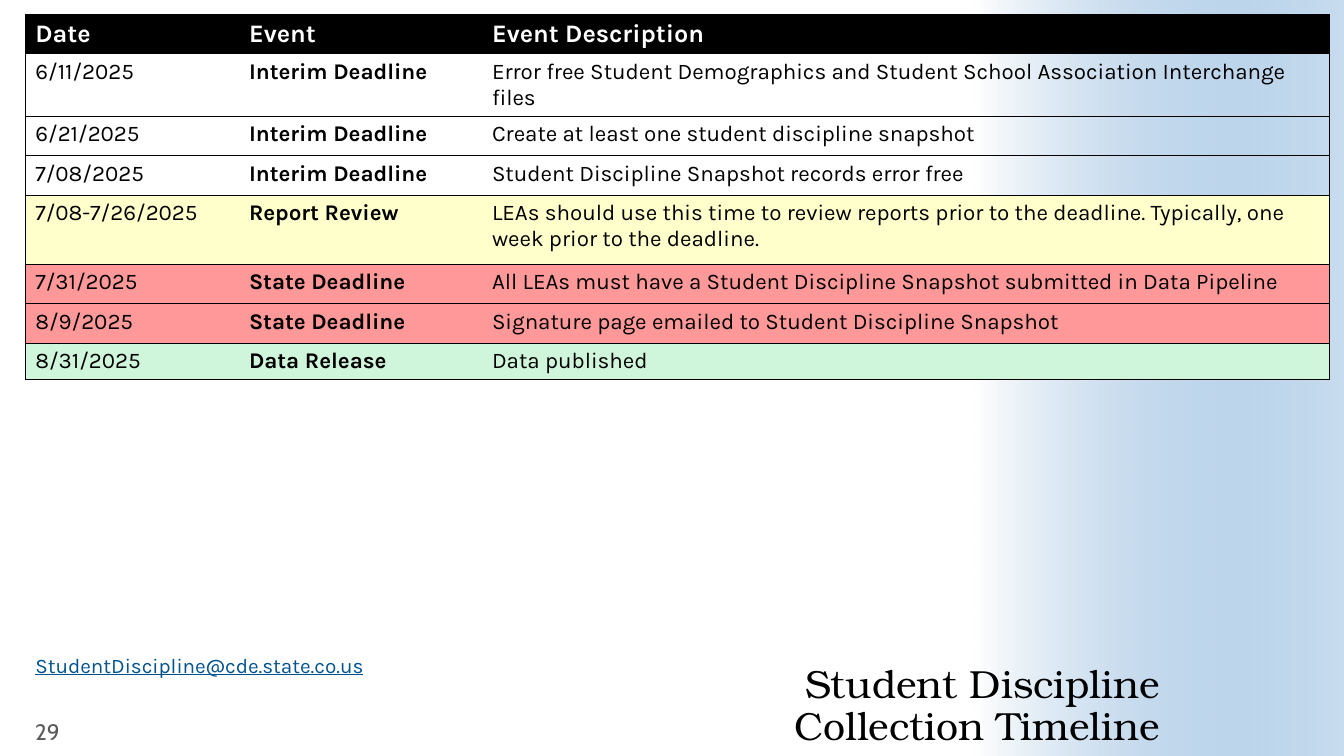
from pptx import Presentation
from pptx import util as u
from pptx.dml import color
from pptx.enum import shapes, text
from pptx.oxml import ns, xmlchemy

COLOURS = {"black": "000000", "white": "FFFFFF", "grey": "595959", "link": "005390",
           "blue": "488BC9", "yellow": "FFFFCC", "red": "FF9999", "green": "CFF5DA"}
SLIDE_WIDTH, SLIDE_HEIGHT = u.Inches(13.33), u.Inches(7.5)
PLAIN_STYLE = "{2D5ABB26-0587-4C30-8999-92F81FD0307C}"
COLUMN_SHARES = [15.9, 18.08, 63.02]
ROW_SHARES = [5.2, 5.6, 5.2, 5.2, 9.2, 5.2, 5.2, 4.67]
TIMELINE = [
    ("black", "Date", "Event", "Event Description"),
    (None, "6/11/2025", "Interim Deadline",
     "Error free Student Demographics and Student School Association Interchange files"),
    (None, "6/21/2025", "Interim Deadline", "Create at least one student discipline snapshot"),
    (None, "7/08/2025", "Interim Deadline", "Student Discipline Snapshot records error free"),
    ("yellow", "7/08-7/26/2025", "Report Review",
     "LEAs should use this time to review reports prior to the deadline. "
     "Typically, one week prior to the deadline."),
    ("red", "7/31/2025", "State Deadline",
     "All LEAs must have a Student Discipline Snapshot submitted in Data Pipeline"),
    ("red", "8/9/2025", "State Deadline", "Signature page emailed to Student Discipline Snapshot"),
    ("green", "8/31/2025", "Data Release", "Data published"),
]


def rgb(name):
    """Return the named colour."""
    return color.RGBColor.from_string(COLOURS[name])


def across(share):
    """Return a percentage of the slide width."""
    return u.Emu(round(SLIDE_WIDTH * share / 100))


def down(share):
    """Return a percentage of the slide height."""
    return u.Emu(round(SLIDE_HEIGHT * share / 100))


def area(left, top, width, height):
    """Return a box given in percentages of the slide."""
    return across(left), down(top), across(width), down(height)


def add_element(parent, tag, **attributes):
    """Append a DrawingML element and return it."""
    element = xmlchemy.OxmlElement(tag)
    for name, value in attributes.items():
        element.set(name, value)
    parent.append(element)
    return element


def style_runs(paragraph, size, font, colour, bold=False, underline=False):
    """Format every run of a paragraph."""
    for run in paragraph.runs:
        run.font.size, run.font.name = u.Pt(size), font
        run.font.bold, run.font.underline = bold, underline
        run.font.color.rgb = rgb(colour)


def fill_text(shape, box, content, anchor, **style):
    """Place a text shape, write its paragraph and return that paragraph."""
    shape.left, shape.top, shape.width, shape.height = box
    frame = shape.text_frame
    frame.text = content
    frame.word_wrap, frame.auto_size = True, text.MSO_AUTO_SIZE.NONE
    frame.vertical_anchor = anchor
    paragraph = frame.paragraphs[0]
    style_runs(paragraph, **style)
    return paragraph


def add_side_fade(slide):
    """Add the blue fade along the right side, behind everything else."""
    shape = slide.shapes.add_shape(shapes.MSO_SHAPE.RECTANGLE, *area(72.54, 0, 27.46, 100))
    shape.shadow.inherit = False
    shape.line.fill.background()
    shape.fill.gradient()
    shape.fill.gradient_angle = 0
    for stop, position, name in zip(shape.fill.gradient_stops, (0, 1), ("white", "blue")):
        stop.position, stop.color.rgb = position, rgb(name)
    end_colour = shape.element.spPr.findall(".//" + ns.qn("a:srgbClr"))[-1]
    add_element(end_colour, "a:alpha", val="30000")
    slide.shapes[0].element.addprevious(shape.element)


def set_border(cell, side, visible):
    """Draw or hide one side of a cell."""
    line = add_element(cell._tc.get_or_add_tcPr(), "a:ln" + side, w=str(u.Pt(0.5)))
    if visible:
        add_element(add_element(line, "a:solidFill"), "a:srgbClr", val=COLOURS["black"])
    else:
        add_element(line, "a:noFill")


def format_cell(cell, content, column, fill, header):
    """Write and format one timeline cell."""
    last = len(COLUMN_SHARES) - 1
    for side, visible in (("L", column == 0), ("R", column == last), ("T", True), ("B", True)):
        set_border(cell, side, visible)
    if fill:
        cell.fill.solid()
        cell.fill.fore_color.rgb = rgb(fill)
    else:
        cell.fill.background()
    cell.text_frame.text = content
    style_runs(cell.text_frame.paragraphs[0], 18 if header else 16, "Karla",
               "white" if header else "black", bold=header or column == 1)


def add_timeline(slide):
    """Add the table of dates and events."""
    box = area(1.88, 1.87, sum(COLUMN_SHARES), sum(ROW_SHARES))
    table = slide.shapes.add_table(len(TIMELINE), len(COLUMN_SHARES), *box).table
    table.horz_banding = False
    table._tbl.tblPr.find(ns.qn("a:tableStyleId")).text = PLAIN_STYLE
    for column, share in zip(table.columns, COLUMN_SHARES):
        column.width = across(share)
    for row, share in zip(table.rows, ROW_SHARES):
        row.height = down(share)
    for row, (fill, *contents) in enumerate(TIMELINE):
        for column, content in enumerate(contents):
            format_cell(table.cell(row, column), content, column, fill, row == 0)


def add_title(slide):
    """Fill the title placeholder at the bottom."""
    title = slide.shapes.title
    paragraph = fill_text(title, area(31.96, 86, 54.31, 13.07),
                          "Student Discipline\vCollection Timeline", text.MSO_ANCHOR.BOTTOM,
                          size=28, font="TeX Gyre Bonum", colour="black")
    paragraph.alignment, paragraph.line_spacing = text.PP_ALIGN.RIGHT, 0.9
    frame = title.text_frame
    frame.margin_left = frame.margin_right = frame.margin_top = frame.margin_bottom = 0


def add_contact(slide):
    """Fill the body placeholder with the contact address."""
    paragraph = fill_text(slide.placeholders[1], area(1.88, 86.27, 29.18, 4.13),
                          "StudentDiscipline@cde.state.co.us", text.MSO_ANCHOR.TOP,
                          size=14.8, font="Karla", colour="link", underline=True)
    properties = paragraph._p.get_or_add_pPr()
    properties.set("marL", "0")
    properties.set("indent", "0")
    add_element(properties, "a:buNone")
    paragraph.line_spacing, paragraph.space_before = 0.8, u.Pt(0)


def add_page_number(slide):
    """Add the page number."""
    box = area(1.88, 94.67, 6.38, 4.13)
    fill_text(slide.shapes.add_textbox(*box), box, "29", text.MSO_ANCHOR.MIDDLE,
              size=16, font="Cabin", colour="grey")


def main():
    """Build and save the slide."""
    presentation = Presentation()
    presentation.slide_width, presentation.slide_height = SLIDE_WIDTH, SLIDE_HEIGHT
    slide = presentation.slides.add_slide(presentation.slide_layouts[1])
    slide.background.fill.solid()
    slide.background.fill.fore_color.rgb = rgb("white")
    for add_part in (add_side_fade, add_title, add_page_number, add_contact, add_timeline):
        add_part(slide)
    presentation.save("out.pptx")


if __name__ == "__main__":
    main()
